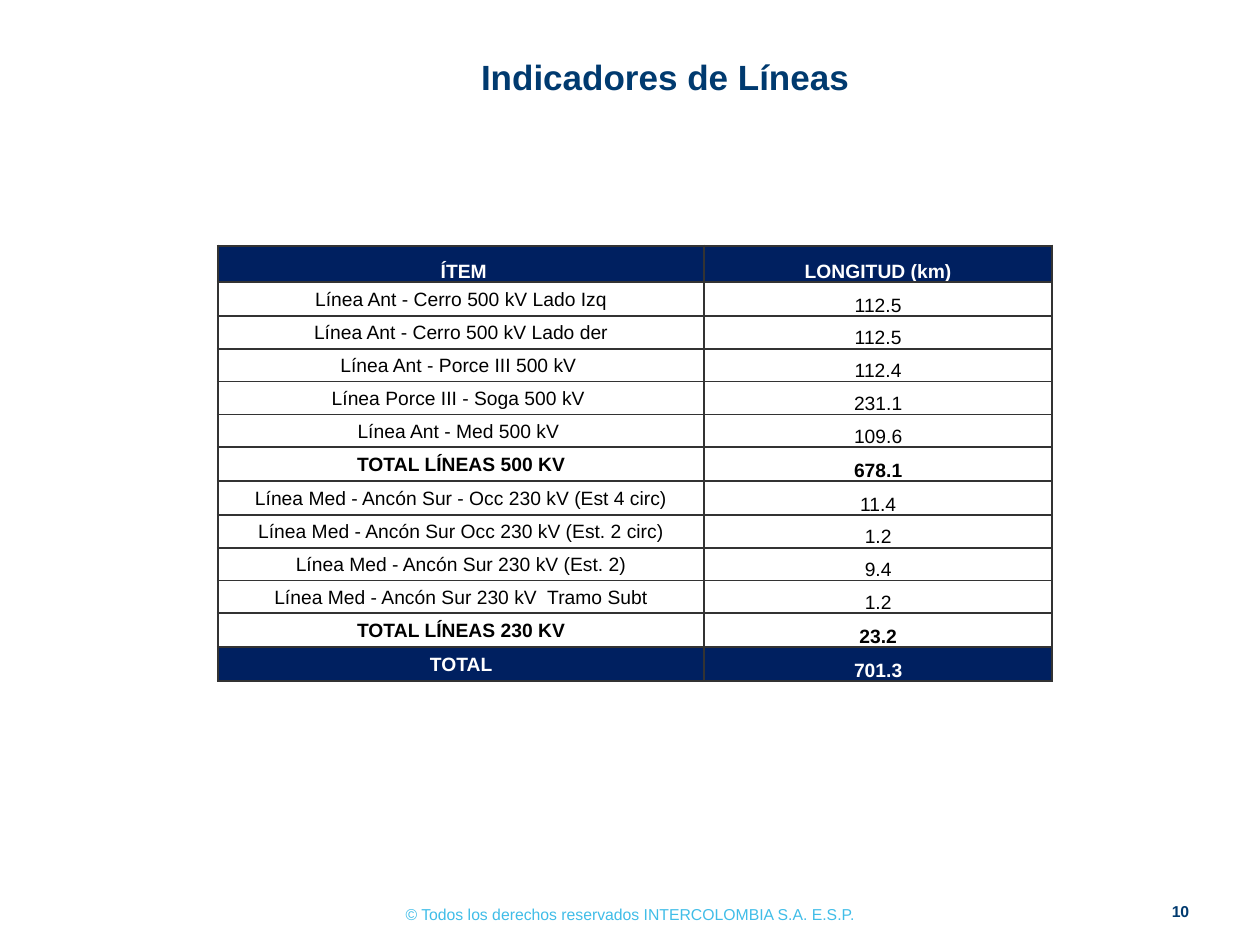
from lxml import etree
from pptx import Presentation
from pptx import util as u
from pptx.dml import color
from pptx.enum import text
from pptx.oxml import ns

NAVY, TITLE_BLUE, SKY = "002060", "003A6F", "40BDE8"
WHITE, BLACK, GRID = "FFFFFF", "000000", "333333"

HEADER = ("\u00a0ÍTEM", "LONGITUD (km)")
GROUPS = [
    ([("Línea Ant - Cerro 500 kV Lado Izq", "112.5"),
      ("Línea Ant - Cerro 500 kV Lado der", "112.5"),
      ("Línea Ant - Porce III 500 kV ", "112.4"),
      ("Línea Porce III - Soga 500 kV ", "231.1"),
      ("Línea Ant - Med 500 kV ", "109.6")],
     ("TOTAL LÍNEAS 500 KV", "678.1")),
    ([("Línea Med - Ancón Sur - Occ 230 kV (Est 4 circ)", "11.4"),
      ("Línea Med - Ancón Sur Occ 230 kV (Est. 2 circ)", "1.2"),
      ("Línea Med - Ancón Sur 230 kV (Est. 2)", "9.4"),
      ("Línea Med - Ancón Sur 230 kV  Tramo Subt", "1.2")],
     ("TOTAL LÍNEAS 230 KV", "23.2")),
]
GRAND_TOTAL = ("TOTAL", "701.3")


def rgb(value):
    return color.RGBColor.from_string(value)


class SlideBuilder:
    font_name = "Arial"

    def __init__(self, slide):
        self.slide = slide

    def style(self, paragraph, size, colour, bold):
        paragraph.alignment = text.PP_ALIGN.CENTER
        for run in paragraph.runs:
            run.font.name = self.font_name
            run.font.size = u.Pt(size)
            run.font.bold = bold
            run.font.color.rgb = rgb(colour)

    def textbox(self, place, words, size, colour, bold=False,
                anchor=text.MSO_ANCHOR.TOP, right_inset=0.1):
        shape = self.slide.shapes.add_textbox(*map(u.Inches, place))
        frame = shape.text_frame
        frame.word_wrap = True
        frame.vertical_anchor = anchor
        frame.margin_right = u.Inches(right_inset)
        frame.text = words
        self.style(frame.paragraphs[0], size, colour, bold)

    def border(self, cell, side, width):
        line = etree.SubElement(cell._tc.get_or_add_tcPr(), ns.qn(f"a:ln{side}"),
                                w=str(u.Pt(width)))
        fill = etree.SubElement(line, ns.qn("a:solidFill"))
        etree.SubElement(fill, ns.qn("a:srgbClr"), val=GRID)

    def cell(self, cell, words, kind, anchor, top, bottom):
        banner = kind == "banner"
        cell.margin_left = cell.margin_right = cell.margin_top = u.Inches(0.01)
        cell.margin_bottom = 0
        cell.vertical_anchor = anchor
        cell.text = words
        self.style(cell.text_frame.paragraphs[0], 11,
                   WHITE if banner else BLACK, kind != "line")
        for side, width in zip("LRTB", (1.5, 1.5, top, bottom)):
            self.border(cell, side, width)
        if banner:
            cell.fill.solid()
            cell.fill.fore_color.rgb = rgb(NAVY)
        else:
            cell.fill.background()

    def table(self, place, widths, rows):
        """Each row is a pair of its kind and its two values."""
        shape = self.slide.shapes.add_table(len(rows), len(widths),
                                            *map(u.Inches, place))
        table = shape.table
        table.first_row = table.horz_banding = False
        for column, width in zip(table.columns, widths):
            column.width = u.Inches(width)
        kinds = [kind for kind, _ in rows]
        # Rules between two plain lines are thinner than the others
        rules = [1.5] + [1 if pair == ("line", "line") else 1.5
                         for pair in zip(kinds, kinds[1:])] + [1.5]
        for index, (kind, values) in enumerate(rows):
            inner_line = kind == "line" and rules[index] == 1
            height = 0.29 if index == 0 else 0.26 if inner_line else 0.27
            table.rows[index].height = u.Inches(height)
            for column, words in enumerate(values):
                centred = column == 0 and index > 0
                anchor = text.MSO_ANCHOR.MIDDLE if centred else text.MSO_ANCHOR.BOTTOM
                self.cell(table.cell(index, column), words, kind, anchor,
                          rules[index], rules[index + 1])


def main():
    presentation = Presentation()
    presentation.slide_width = u.Inches(10)
    presentation.slide_height = u.Inches(7.5)
    builder = SlideBuilder(presentation.slides.add_slide(presentation.slide_layouts[6]))

    # Title
    builder.textbox((1.73, 0.34, 7.1, 0.54), "Indicadores de Líneas", 20,
                    TITLE_BLUE, bold=True, anchor=text.MSO_ANCHOR.MIDDLE)

    # Line lengths by voltage
    rows = [("banner", HEADER)]
    for lines, total in GROUPS:
        rows += [("line", line) for line in lines] + [("total", total)]
    rows.append(("banner", GRAND_TOTAL))
    builder.table((1.73, 1.95, 6.62, 3.46), (3.86, 2.76), rows)

    # Footer and page number
    builder.textbox((2.72, 7.13, 4.56, 0.25),
                    "© Todos los derechos reservados INTERCOLOMBIA S.A. E.S.P.", 9, SKY)
    builder.textbox((9.12, 7.1, 0.4, 0.26), "10", 9, TITLE_BLUE, bold=True,
                    anchor=text.MSO_ANCHOR.BOTTOM, right_inset=0)

    presentation.save("out.pptx")


if __name__ == "__main__":
    main()
